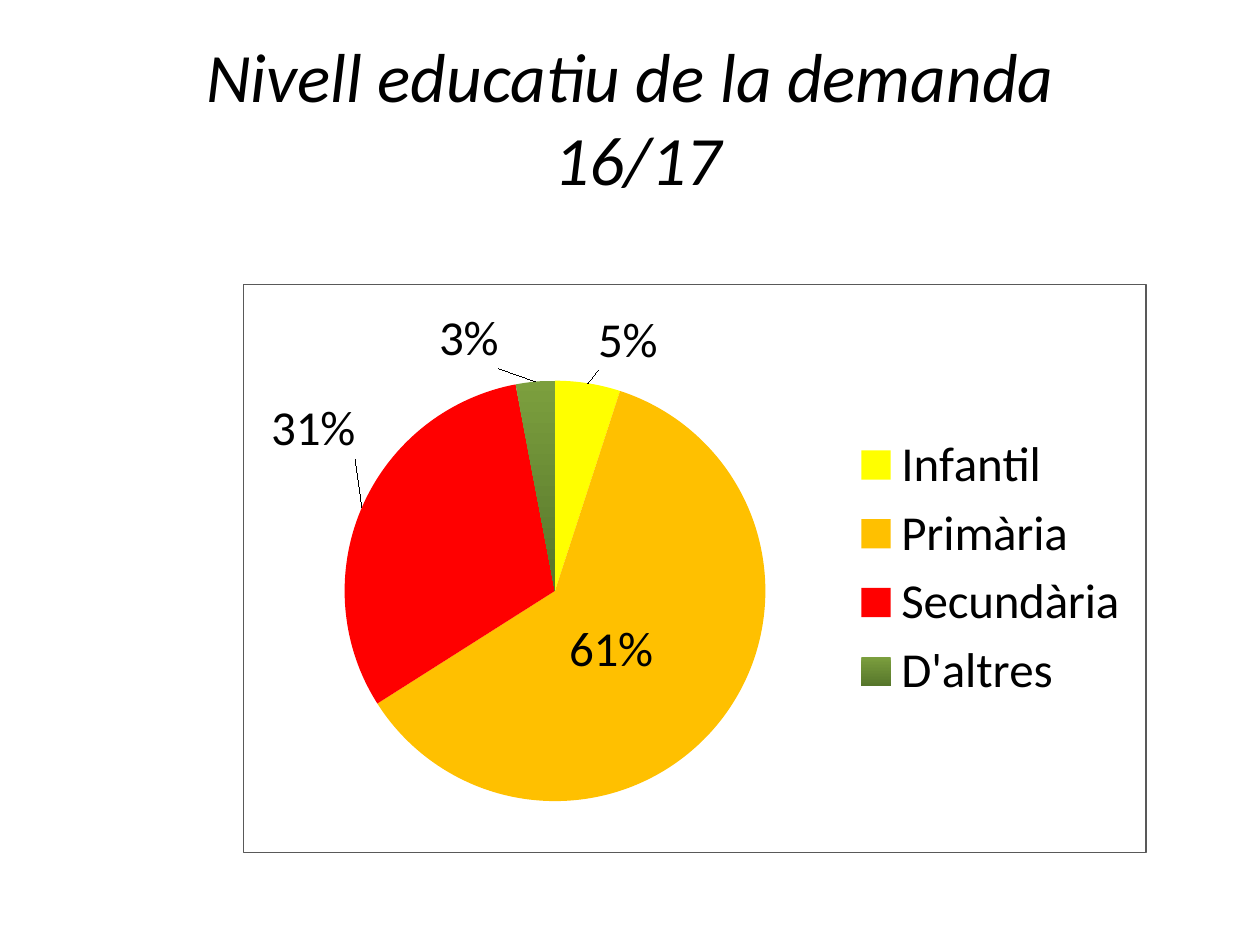
import lxml.etree
import pptx
import pptx.chart.data
import pptx.dml.color
import pptx.enum.chart
import pptx.enum.text
import pptx.oxml
import pptx.oxml.ns
import pptx.util
from pptx.util import Inches

FONT = "Calibri"
LabelPosition = pptx.enum.chart.XL_LABEL_POSITION


def color(hex_code):
    return pptx.dml.color.RGBColor.from_string(hex_code)


def write_text(text_frame, text, size, hex_code="000000", italic=False,
               align=pptx.enum.text.PP_ALIGN.CENTER):
    paragraph = text_frame.paragraphs[0]
    paragraph.text = text
    paragraph.alignment = align
    for run in paragraph.runs:
        run.font.name = FONT
        run.font.size = pptx.util.Pt(size)
        run.font.italic = italic
        run.font.color.rgb = color(hex_code)


presentation = pptx.Presentation()
presentation.slide_width = Inches(10)
presentation.slide_height = Inches(7.5)
slide = presentation.slides.add_slide(presentation.slide_layouts[5])

# Title
title = slide.shapes.title
title.left, title.top = Inches(0.5), Inches(0.3)
title.width, title.height = Inches(9), Inches(1.25)
title.text_frame.vertical_anchor = pptx.enum.text.MSO_ANCHOR.MIDDLE
write_text(title.text_frame, "Nivell educatiu de la demanda\v 16/17", 39.6, italic=True)

# Level, percentage, fill, label position, label shift as a share of the chart
levels = [
    ("Infantil", 5, "FFFF00", LabelPosition.OUTSIDE_END, (0.01, -0.01)),
    ("Primària", 61, "FFC000", LabelPosition.CENTER, (-0.03, -0.01)),
    ("Secundària", 31, "FF0000", LabelPosition.OUTSIDE_END, (0, -0.08)),
    ("D'altres", 3, None, LabelPosition.OUTSIDE_END, (-0.04, -0.01)),
]
chart_data = pptx.chart.data.CategoryChartData()
chart_data.categories = [level[0] for level in levels]
chart_data.add_series("Series 1", [level[1] for level in levels])
chart = slide.shapes.add_chart(
    pptx.enum.chart.XL_CHART_TYPE.PIE, Inches(1.93), Inches(2.25),
    Inches(7.17), Inches(4.52), chart_data).chart
chart.has_title = False
chart.font.name = FONT
chart.font.size = pptx.util.Pt(10)
chart.font.color.rgb = color("000000")
chart.has_legend = True
chart.legend.position = pptx.enum.chart.XL_LEGEND_POSITION.RIGHT
chart.legend.include_in_layout = False
chart.legend.font.size = pptx.util.Pt(28)
chart.legend.font.name = FONT

plot = chart.plots[0]
plot.vary_by_categories = True
plot.has_data_labels = True
plot.data_labels.show_percentage = True
plot.data_labels.show_value = False
plot.data_labels.font.size = pptx.util.Pt(28)

for index, (name, value, hex_code, position, shift) in enumerate(levels):
    point = plot.series[0].points[index]
    fill = point.format.fill
    if hex_code:
        fill.solid()
        fill.fore_color.rgb = color(hex_code)
    else:
        fill.gradient()
        fill.gradient_angle = 270
        for stop, shade in zip(fill.gradient_stops, ("7C9F3E", "56762B")):
            stop.color.rgb = color(shade)
    point.format.line.fill.background()
    point.data_label.font.size = pptx.util.Pt(28)
    point.data_label.font.name = FONT
    point.data_label.position = position

# Label shifts, plot area and frame
namespaces = pptx.oxml.ns.nsdecls("c", "a")
chart_space = chart.element
for label, level in zip(chart_space.xpath(".//c:ser/c:dLbls/c:dLbl"), levels):
    label.xpath("c:showVal")[0].set("val", "0")
    label.xpath("c:showPercent")[0].set("val", "1")
    x, y = level[4]
    label.xpath("c:idx")[0].addnext(pptx.oxml.parse_xml(
        f'<c:layout {namespaces}><c:manualLayout>'
        f'<c:x val="{x}"/><c:y val="{y}"/></c:manualLayout></c:layout>'))

plot_area = chart_space.xpath("c:chart/c:plotArea")[0]
for layout in plot_area.xpath("c:layout"):
    plot_area.remove(layout)
plot_area.insert(0, pptx.oxml.parse_xml(
    f'<c:layout {namespaces}><c:manualLayout><c:layoutTarget val="inner"/>'
    '<c:xMode val="edge"/><c:yMode val="edge"/><c:x val="0.11"/><c:y val="0.17"/>'
    '<c:w val="0.47"/><c:h val="0.74"/></c:manualLayout></c:layout>'))
chart_space.xpath("c:chart")[0].addnext(pptx.oxml.parse_xml(
    f'<c:spPr {namespaces}><a:noFill/><a:ln w="9525"><a:solidFill>'
    '<a:srgbClr val="595959"/></a:solidFill></a:ln></c:spPr>'))

presentation.save("out.pptx")
